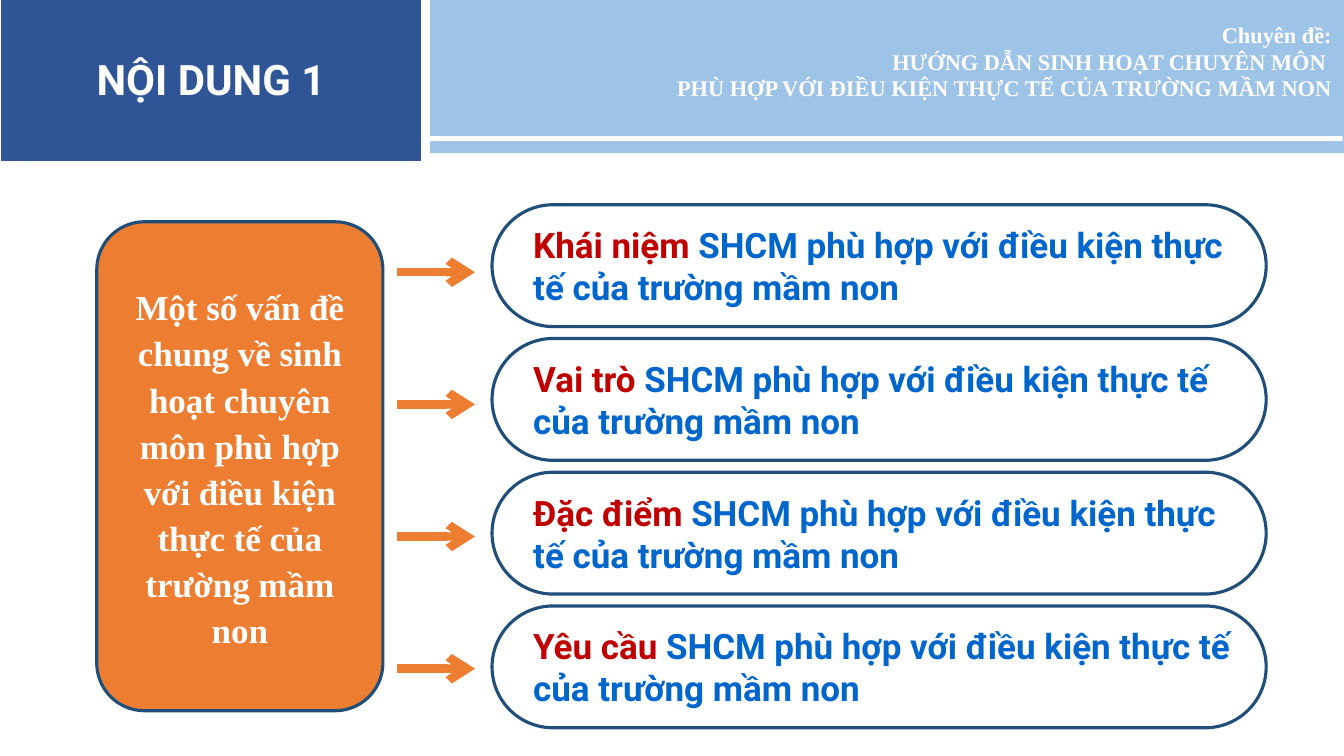
"""Builds the section slide on professional meetings in preschools."""
from lxml.etree import SubElement
from pptx import Presentation
from pptx.dml.color import RGBColor
from pptx.enum.shapes import MSO_CONNECTOR, MSO_SHAPE
from pptx.enum.text import MSO_ANCHOR, MSO_AUTO_SIZE, PP_ALIGN
from pptx.oxml import parse_xml
from pptx.oxml.ns import nsdecls, qn
from pptx.util import Cm, Pt

COLORS = {
    "band": "9DC3E6", "white": "FFFFFF", "navy": "2F5597", "outline": "1F4E79",
    "orange": "ED7D31", "keyword": "C00000", "body": "0066CC",
}
TOPICS = ["Khái niệm ", "Vai trò ", "Đặc điểm ", "Yêu cầu "]
TOPIC_TAIL = "SHCM phù hợp với điều kiện thực tế của trường mầm non"
HEADING_LINES = [
    "Chuyên đề:",
    "HƯỚNG DẪN SINH HOẠT CHUYÊN MÔN ",
    "PHÙ HỢP VỚI ĐIỀU KIỆN THỰC TẾ CỦA TRƯỜNG MẦM NON",
]


def rgb(name):
    return RGBColor.from_string(COLORS[name])


def write(paragraph, text, size=25, font="Roboto", color="white", align=PP_ALIGN.LEFT):
    paragraph.alignment = align
    run = paragraph.add_run()
    run.text = text
    run.font.size = Pt(size)
    run.font.name = font
    run.font.bold = True
    run.font.color.rgb = rgb(color)
    return run


prs = Presentation()
prs.slide_width, prs.slide_height = Cm(33.87), Cm(19.05)
slide = prs.slides.add_slide(prs.slide_layouts[5])
shapes = slide.shapes

for left, top, width, height, color in [
    (1.27, -0.08, 32.6, 3.94, "band"),
    (5.64, 3.43, 28.2, 0.13, "white"),
]:
    stripe = shapes.add_shape(MSO_SHAPE.RECTANGLE, Cm(left), Cm(top), Cm(width), Cm(height))
    stripe.shadow.inherit = False
    stripe.fill.solid()
    stripe.fill.fore_color.rgb = rgb(color)
    stripe.line.fill.background()

subject = shapes.add_shape(
    MSO_SHAPE.FLOWCHART_ALTERNATE_PROCESS, Cm(2.44), Cm(5.59), Cm(7.21), Cm(12.32))
subject.shadow.inherit = False
subject.fill.solid()
subject.fill.fore_color.rgb = rgb("orange")
subject.line.color.rgb = rgb("outline")
subject.line.width = Pt(2.25)
subject_text = subject.text_frame
subject_text.word_wrap = True
subject_text.vertical_anchor = MSO_ANCHOR.MIDDLE
subject_text.margin_left = subject_text.margin_right = Cm(0.45)
subject_text.paragraphs[0].line_spacing = 1.1
write(subject_text.paragraphs[0],
      "Một số vấn đề chung về sinh hoạt chuyên môn phù hợp với điều kiện thực tế "
      "của trường mầm non",
      font="Times New Roman", align=PP_ALIGN.CENTER)

for index, keyword in enumerate(TOPICS):
    arrow_y = Cm(6.86 + 3.33 * index)
    arrow = shapes.add_connector(MSO_CONNECTOR.STRAIGHT, Cm(10), arrow_y, Cm(11.97), arrow_y)
    arrow.line.color.rgb = rgb("orange")
    arrow.line.width = Pt(6)
    SubElement(arrow.line._get_or_add_ln(), qn("a:tailEnd"), type="arrow")
    SubElement(arrow._element.spPr, qn("a:effectLst"))

    topic = shapes.add_shape(
        MSO_SHAPE.ROUNDED_RECTANGLE, Cm(12.4), Cm(5.16 + 3.37 * index), Cm(19.51), Cm(3.07))
    topic.adjustments[0] = 0.5
    topic.shadow.inherit = False
    topic.fill.solid()
    topic.fill.fore_color.rgb = rgb("white")
    white_fill = topic._element.spPr.find(qn("a:solidFill"))
    SubElement(white_fill[0], qn("a:alpha"), val="95000")
    topic.line.color.rgb = rgb("outline")
    topic.line.width = Pt(2.25)
    topic_text = topic.text_frame
    topic_text.word_wrap = True
    topic_text.vertical_anchor = MSO_ANCHOR.MIDDLE
    topic_text.margin_left, topic_text.margin_right = Cm(0.59), Cm(0.18)
    topic_text.margin_top = topic_text.margin_bottom = 0
    write(topic_text.paragraphs[0], keyword, color="keyword")
    write(topic_text.paragraphs[0], TOPIC_TAIL, color="body")

title = shapes.title
title.left, title.top, title.width, title.height = Cm(-0.08), Cm(-0.18), Cm(10.8), Cm(4.34)
title._element.spPr.append(
    parse_xml(f'<a:prstGeom {nsdecls("a")} prst="homePlate"><a:avLst/></a:prstGeom>'))
title.fill.solid()
title.fill.fore_color.rgb = rgb("navy")
title.line.color.rgb = rgb("white")
title.line.width = Pt(6)
title.text_frame.auto_size = MSO_AUTO_SIZE.NONE
title.text_frame.vertical_anchor = MSO_ANCHOR.MIDDLE
write(title.text_frame.paragraphs[0], "NỘI DUNG 1", size=30, align=PP_ALIGN.CENTER)
title._element.getparent().append(title._element)

heading = shapes.add_textbox(Cm(15.67), Cm(0.51), Cm(18.14), Cm(2.06)).text_frame
heading.word_wrap = True
heading.vertical_anchor = MSO_ANCHOR.MIDDLE
for index, text in enumerate(HEADING_LINES):
    line = heading.add_paragraph() if index else heading.paragraphs[0]
    run = write(line, text, size=16, font="Times New Roman", align=PP_ALIGN.RIGHT)
    run.font.fill._xPr.find(qn("a:solidFill")).addnext(parse_xml(
        f'<a:effectLst {nsdecls("a")}><a:outerShdw blurRad="38100" dist="38100" dir="2700000">'
        '<a:srgbClr val="000000"><a:alpha val="43000"/></a:srgbClr>'
        '</a:outerShdw></a:effectLst>'))

prs.save("out.pptx")
